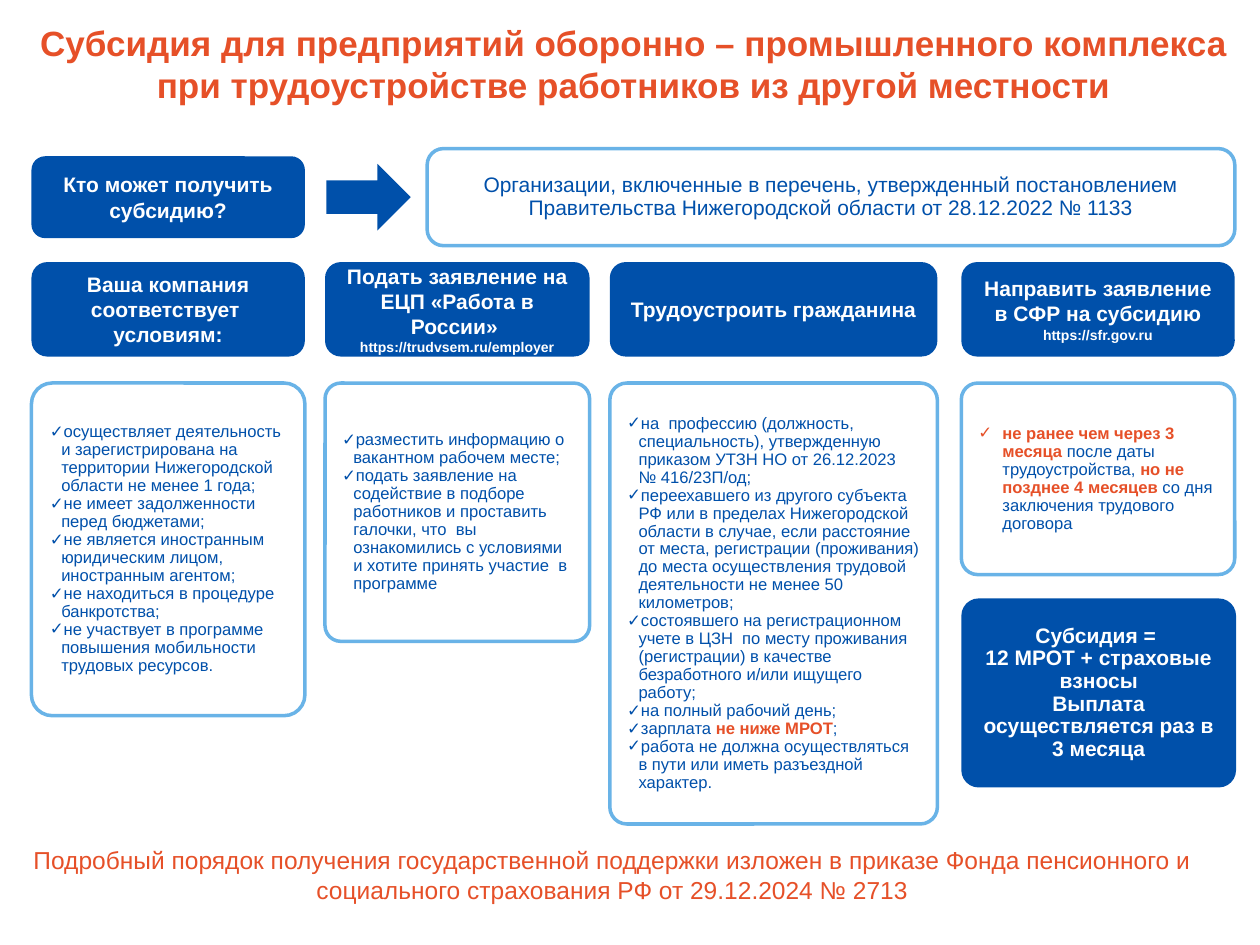
from copy import deepcopy
from dataclasses import dataclass

from lxml.etree import SubElement
from pptx import Presentation
from pptx.dml.color import RGBColor
from pptx.enum.shapes import MSO_SHAPE as Shape
from pptx.enum.text import MSO_ANCHOR as Anchor, PP_ALIGN as Align
from pptx.oxml.ns import qn
from pptx.util import Inches, Pt


@dataclass(frozen=True)
class Theme:
    font: str = "Arial"
    blue: str = "0050AA"
    sky: str = "69B3E7"
    orange: str = "E65028"
    white: str = "FFFFFF"
    title: float = 20
    footer: float = 14
    heading: float = 12
    item: float = 9.5
    url: float = 8
    border: float = 2
    tight: float = 0.9


THEME = Theme()

# Content: *asterisks* mark highlighted words
TITLE = ("Субсидия для предприятий оборонно – промышленного комплекса "
         "при трудоустройстве работников из другой местности")
QUESTION = "Кто может получить субсидию?"
ANSWER = ("Организации, включенные в перечень, утвержденный постановлением "
          "Правительства Нижегородской области от 28.12.2022 № 1133")
STEPS = [
    dict(left=0.25, width=2.17, height=2.64, corner=0.076, indent=0.09,
         heading="Ваша компания соответствует  условиям:", url="",
         items=["осуществляет деятельность и зарегистрирована на территории "
                "Нижегородской области не менее 1 года;",
                "не имеет задолженности перед бюджетами;",
                "не является иностранным юридическим лицом, иностранным агентом;",
                "не находиться в процедуре банкротства;",
                "не участвует в программе повышения мобильности трудовых ресурсов."]),
    dict(left=2.58, width=2.1, height=2.05, corner=0.061, indent=0.09,
         heading="Подать заявление на ЕЦП «Работа в России» ",
         url="https://trudvsem.ru/employer",
         items=["разместить информацию о вакантном рабочем месте;",
                "подать заявление на содействие в подборе работников и проставить "
                "галочки, что  вы ознакомились с условиями и хотите принять "
                "участие  в программе"]),
    dict(left=4.84, width=2.6, height=3.5, corner=0.052, indent=0.09,
         heading="Трудоустроить гражданина", url="",
         items=["на  профессию (должность, специальность), утвержденную приказом "
                "УТЗН НО от 26.12.2023 \n№ 416/23П/од;",
                "переехавшего из другого субъекта РФ или в пределах Нижегородской "
                "области в случае, если расстояние от места, регистрации "
                "(проживания) до места осуществления трудовой деятельности не "
                "менее 50 километров;",
                "состоявшего на регистрационном учете в ЦЗН  по месту проживания "
                "(регистрации) в качестве безработного и/или ищущего работу;",
                "на полный рабочий день;",
                "зарплата *не ниже МРОТ*;",
                "работа не должна осуществляться в пути или иметь разъездной "
                "характер."]),
    dict(left=7.63, width=2.17, height=1.52, corner=0.085, indent=0.19,
         heading="Направить заявление в СФР на субсидию",
         url="https://sfr.gov.ru",
         items=["*не ранее чем через 3 месяца *после даты трудоустройства, "
                "*но не позднее 4 месяцев *со дня заключения трудового договора"]),
]
PAYMENT = ("Субсидия = \n12 МРОТ + страховые взносы\n"
           "Выплата осуществляется раз в 3 месяца")
FOOTER = ("Подробный порядок получения государственной поддержки изложен в приказе "
          "Фонда пенсионного и социального страхования РФ от 29.12.2024 № 2713")

# Layout
HEADING_TOP, HEADING_HEIGHT, CARD_TOP = 2.08, 0.75, 3.04


def add_text(paragraph, text, size, color, bold=False):
    """Append text, turning each newline into a line break of the same size."""
    for number, line in enumerate(text.split("\n")):
        if number:
            paragraph.add_line_break()
        run = paragraph.add_run()
        run.text = line
        run.font.name = THEME.font
        run.font.size = Pt(size)
        run.font.bold = bold
        run.font.color.rgb = RGBColor.from_string(color)
        if number:
            run._r.getprevious().append(deepcopy(run._r.rPr))


def add_centered(frame, text, size, color, bold=False, spacing=None):
    frame.word_wrap = True
    paragraph = frame.paragraphs[0]
    paragraph.alignment = Align.CENTER
    paragraph.line_spacing = spacing
    add_text(paragraph, text, size, color, bold)
    return paragraph


def add_panel(slide, box, fill=None, corner=0.167, kind=Shape.ROUNDED_RECTANGLE):
    """Blue panel when filled, otherwise a sky-outlined frame."""
    panel = slide.shapes.add_shape(kind, *map(Inches, box))
    panel.shadow.inherit = False
    if kind == Shape.ROUNDED_RECTANGLE:
        panel.adjustments[0] = corner
    if fill:
        panel.fill.solid()
        panel.fill.fore_color.rgb = RGBColor.from_string(fill)
        panel.line.fill.background()
    else:
        panel.fill.background()
        panel.line.color.rgb = RGBColor.from_string(THEME.sky)
        panel.line.width = Pt(THEME.border)
    panel.text_frame.word_wrap = True
    panel.text_frame.vertical_anchor = Anchor.MIDDLE
    return panel


def add_checklist(frame, items, indent):
    for number, item in enumerate(items):
        paragraph = frame.add_paragraph() if number else frame.paragraphs[0]
        paragraph.alignment = Align.LEFT
        paragraph.line_spacing = THEME.tight
        properties = paragraph._p.get_or_add_pPr()
        properties.set("marL", str(Inches(indent)))
        properties.set("indent", str(-Inches(indent)))
        SubElement(properties, qn("a:buFont")).set("typeface", THEME.font)
        SubElement(properties, qn("a:buChar")).set("char", "✓")
        for position, part in enumerate(item.split("*")):
            marked = position % 2 == 1
            if part:
                add_text(paragraph, part, THEME.item,
                         THEME.orange if marked else THEME.blue, marked)


def main():
    deck = Presentation()
    deck.slide_width, deck.slide_height = Inches(10), Inches(7.5)
    slide = deck.slides.add_slide(deck.slide_layouts[5])

    # Title
    title = slide.shapes.title
    title.left, title.top, title.width, title.height = map(
        Inches, (0.01, 0.12, 10.04, 0.82))
    title.text_frame.vertical_anchor = Anchor.TOP
    add_centered(title.text_frame, TITLE, THEME.title, THEME.orange, True)

    # Who is eligible
    question = add_panel(slide, (0.25, 1.24, 2.17, 0.65), THEME.blue)
    add_centered(question.text_frame, QUESTION, THEME.heading, THEME.white, True)
    add_panel(slide, (2.59, 1.3, 0.67, 0.53), THEME.blue, kind=Shape.RIGHT_ARROW)
    answer = add_panel(slide, (3.39, 1.18, 6.41, 0.77))
    add_centered(answer.text_frame, ANSWER, THEME.heading, THEME.blue,
                 spacing=THEME.tight)

    # Steps: heading above a checklist card
    for step in STEPS:
        left, width = step["left"], step["width"]
        heading = add_panel(slide, (left, HEADING_TOP, width, HEADING_HEIGHT),
                            THEME.blue)
        paragraph = add_centered(heading.text_frame, step["heading"],
                                 THEME.heading, THEME.white, True)
        if step["url"]:
            paragraph.add_line_break()
            add_text(paragraph, step["url"], THEME.url, THEME.white, True)
        card = add_panel(slide, (left, CARD_TOP, width, step["height"]),
                         corner=step["corner"])
        add_checklist(card.text_frame, step["items"], step["indent"])

    # Payment under the last step
    payment = add_panel(slide, (7.63, 4.75, 2.18, 1.5), THEME.blue, 0.091)
    add_centered(payment.text_frame, PAYMENT, THEME.heading, THEME.white, True,
                 THEME.tight)

    # Footer
    footer = slide.shapes.add_textbox(*map(Inches, (0.02, 6.66, 9.68, 0.57)))
    add_centered(footer.text_frame, FOOTER, THEME.footer, THEME.orange)

    deck.save("out.pptx")


if __name__ == "__main__":
    main()
